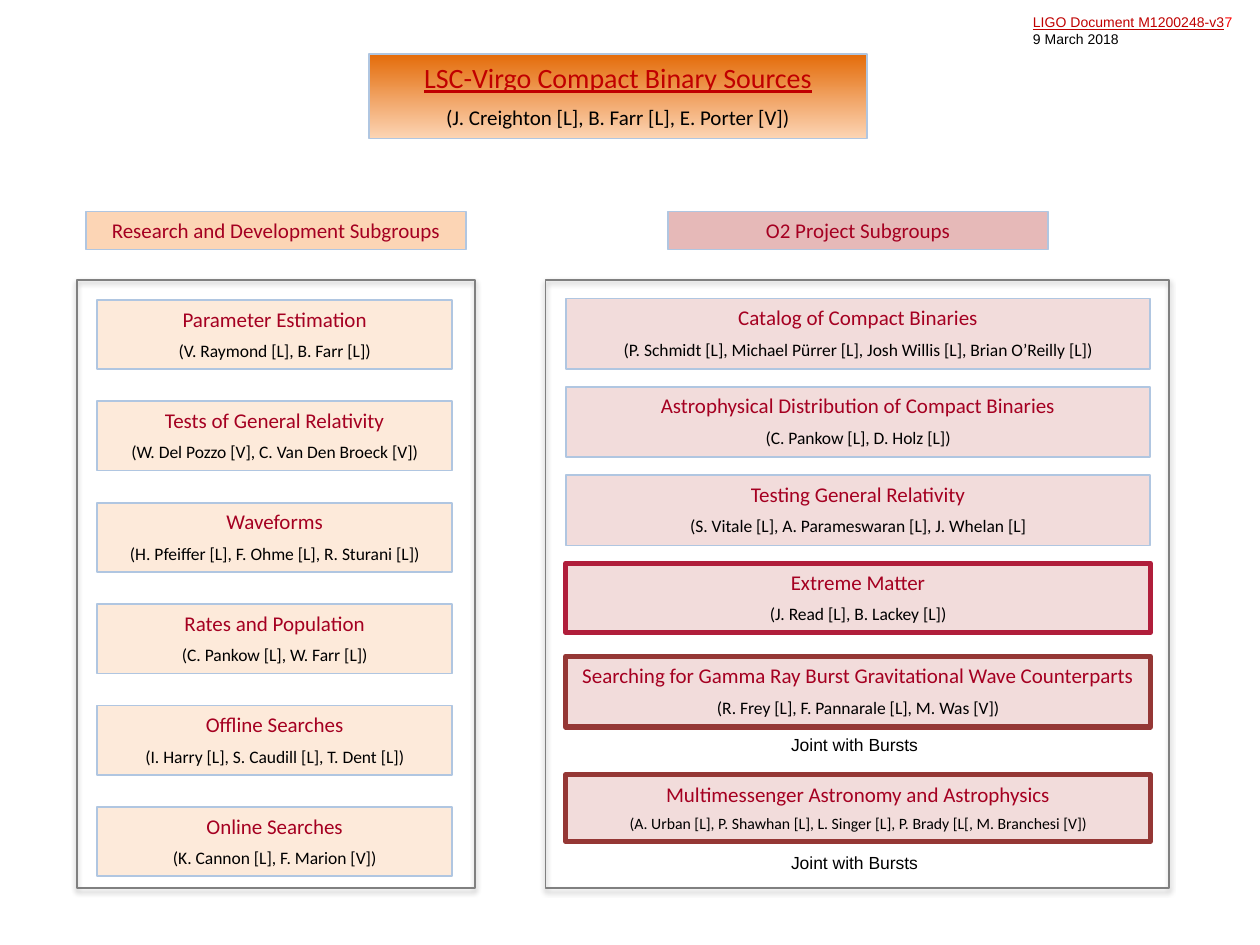
from dataclasses import dataclass

from lxml import etree
from pptx import Presentation
from pptx import util as u
from pptx.dml.color import RGBColor
from pptx.enum import shapes, text
from pptx.oxml.ns import qn


@dataclass(frozen=True)
class Theme:
    body_font: str = "Calibri"
    note_font: str = "Arial"
    title_size: int = 16
    heading_size: int = 12
    people_size: int = 10
    small_people_size: int = 9
    note_size: int = 10
    document_size: int = 8
    black: str = "000000"
    heading: str = "A50021"
    title: str = "C00000"
    revision: str = "FF0000"
    title_top: str = "E46C0A"
    title_bottom: str = "FCD5B5"
    research_header: str = "FCD5B5"
    research_box: str = "FDEADA"
    project_header: str = "E6B9B8"
    project_box: str = "F2DCDB"
    border: str = "B0C6E1"
    matter_border: str = "B01E3B"
    joint_border: str = "953735"
    panel_border: str = "808080"


THEME = Theme()

RESEARCH = [
    ("Parameter Estimation", "(V. Raymond [L], B. Farr [L])"),
    ("Tests of General Relativity", "(W. Del Pozzo [V], C. Van Den Broeck [V])"),
    ("Waveforms", "(H. Pfeiffer [L], F. Ohme [L], R. Sturani [L])"),
    ("Rates and Population", "(C. Pankow [L], W. Farr [L])"),
    ("Offline Searches", "(I. Harry [L], S. Caudill [L], T. Dent [L])"),
    ("Online Searches", "(K. Cannon [L], F. Marion [V])"),
]

PROJECTS = [
    ("Catalog of Compact Binaries",
     "(P. Schmidt [L], Michael Pürrer [L], Josh Willis [L], Brian O’Reilly [L])"),
    ("Astrophysical Distribution of Compact Binaries", "(C. Pankow [L], D. Holz [L])"),
    ("Testing General Relativity", "(S. Vitale [L], A. Parameswaran [L], J. Whelan [L]"),
]

HIGHLIGHTED = [
    (4.47, 0.55, THEME.matter_border, THEME.people_size,
     "Extreme Matter", "(J. Read [L], B. Lackey [L])"),
    (5.21, 0.56, THEME.joint_border, THEME.people_size,
     "Searching for Gamma Ray Burst Gravitational Wave Counterparts",
     "(R. Frey [L], F. Pannarale [L], M. Was [V])"),
    (6.15, 0.53, THEME.joint_border, THEME.small_people_size,
     "Multimessenger Astronomy and Astrophysics",
     "(A. Urban [L], P. Shawhan [L], L. Singer [L], P. Brady [L[, M. Branchesi [V])"),
]


def color(value):
    return RGBColor.from_string(value)


def format_run(run, font, size, value, underline=False):
    run.font.name = font
    run.font.size = u.Pt(size)
    run.font.color.rgb = color(value)
    run.font.underline = underline


def add_rectangle(slide, left, top, width, height, border, weight=1):
    shape = slide.shapes.add_shape(
        shapes.MSO_SHAPE.RECTANGLE,
        u.Inches(left), u.Inches(top), u.Inches(width), u.Inches(height))
    shape.shadow.inherit = False
    shape.fill.background()
    shape.line.color.rgb = color(border)
    shape.line.width = u.Pt(weight)
    return shape


def add_panel(slide, left, width):
    shape = add_rectangle(slide, left, 2.22, width, 4.83, THEME.panel_border)
    effects = shape.element.spPr.find(qn("a:effectLst"))
    shadow = etree.SubElement(
        effects, qn("a:outerShdw"), blurRad=str(u.Pt(3.1)), dist=str(u.Pt(1.8)),
        dir="5400000", rotWithShape="0")
    shade = etree.SubElement(shadow, qn("a:srgbClr"), val=THEME.black)
    etree.SubElement(shade, qn("a:alpha"), val="35000")


def add_box(slide, place, fill, lines, border=THEME.border, weight=1):
    shape = add_rectangle(slide, *place, border, weight)
    if fill:
        shape.fill.solid()
        shape.fill.fore_color.rgb = color(fill)
    frame = shape.text_frame
    frame.word_wrap = True
    frame.vertical_anchor = text.MSO_ANCHOR.TOP
    frame.text = "\n".join(line[0] for line in lines)
    for index, (paragraph, line) in enumerate(zip(frame.paragraphs, lines)):
        paragraph.alignment = text.PP_ALIGN.CENTER
        if index:
            paragraph.space_before = u.Pt(line[1] / 2)
        format_run(paragraph.runs[0], THEME.body_font, *line[1:])
    return shape


def add_title(slide):
    shape = add_box(slide, (2.93, 0.43, 3.95, 0.67), None, [
        ("LSC-Virgo Compact Binary Sources", THEME.title_size, THEME.title, True),
        ("(J. Creighton [L], B. Farr [L], E. Porter [V])", THEME.heading_size, THEME.black)])
    shape.fill.gradient()
    shape.fill.gradient_angle = 270
    stops = zip(shape.fill.gradient_stops, (THEME.title_top, THEME.title_bottom))
    for position, (stop, value) in enumerate(stops):
        stop.color.rgb = color(value)
        stop.position = position


def add_header(slide, left, fill, heading):
    add_box(slide, (left, 1.68, 3.02, 0.3), fill,
            [(heading, THEME.heading_size, THEME.heading)])


def add_subgroup(slide, place, fill, heading, people, people_size=THEME.people_size, **outline):
    add_box(slide, place, fill, [
        (heading, THEME.heading_size, THEME.heading),
        (people, people_size, THEME.black)], **outline)


def add_text(slide, left, top, width, height, content, size, wrap):
    shape = slide.shapes.add_textbox(
        u.Inches(left), u.Inches(top), u.Inches(width), u.Inches(height))
    frame = shape.text_frame
    frame.word_wrap = wrap
    frame.text = content
    for paragraph in frame.paragraphs:
        format_run(paragraph.runs[0], THEME.note_font, size, THEME.black)
    return frame


def add_document_label(slide):
    frame = add_text(slide, 8.1, 0.06, 1.84, 0.37,
                     "LIGO Document M1200248-v3\n9 March 2018", THEME.document_size, True)
    paragraph = frame.paragraphs[0]
    format_run(paragraph.runs[0], THEME.note_font, THEME.document_size, THEME.title, True)
    revision = paragraph.add_run()
    revision.text = "7"
    format_run(revision, THEME.note_font, THEME.document_size, THEME.revision)


def main():
    presentation = Presentation()
    presentation.slide_width = u.Inches(10)
    presentation.slide_height = u.Inches(7.5)
    slide = presentation.slides.add_slide(presentation.slide_layouts[6])

    add_document_label(slide)
    add_title(slide)
    add_header(slide, 0.68, THEME.research_header, "Research and Development Subgroups")
    add_header(slide, 5.3, THEME.project_header, "O2 Project Subgroups")
    add_panel(slide, 0.61, 3.16)
    add_panel(slide, 4.33, 4.95)

    for row, (heading, people) in enumerate(RESEARCH):
        place = (0.77, 2.38 + row * 0.805, 2.82, 0.55)
        add_subgroup(slide, place, THEME.research_box, heading, people)
    for row, (heading, people) in enumerate(PROJECTS):
        place = (4.49, 2.37 + row * 0.7, 4.64, 0.56)
        add_subgroup(slide, place, THEME.project_box, heading, people)
    for top, height, border, size, heading, people in HIGHLIGHTED:
        add_subgroup(slide, (4.49, top, 4.64, height), THEME.project_box,
                     heading, people, size, border=border, weight=3)
    for top in (5.78, 6.71):
        add_text(slide, 6.18, top, 1.26, 0.27, "Joint with Bursts", THEME.note_size, False)

    presentation.save("out.pptx")


if __name__ == "__main__":
    main()
